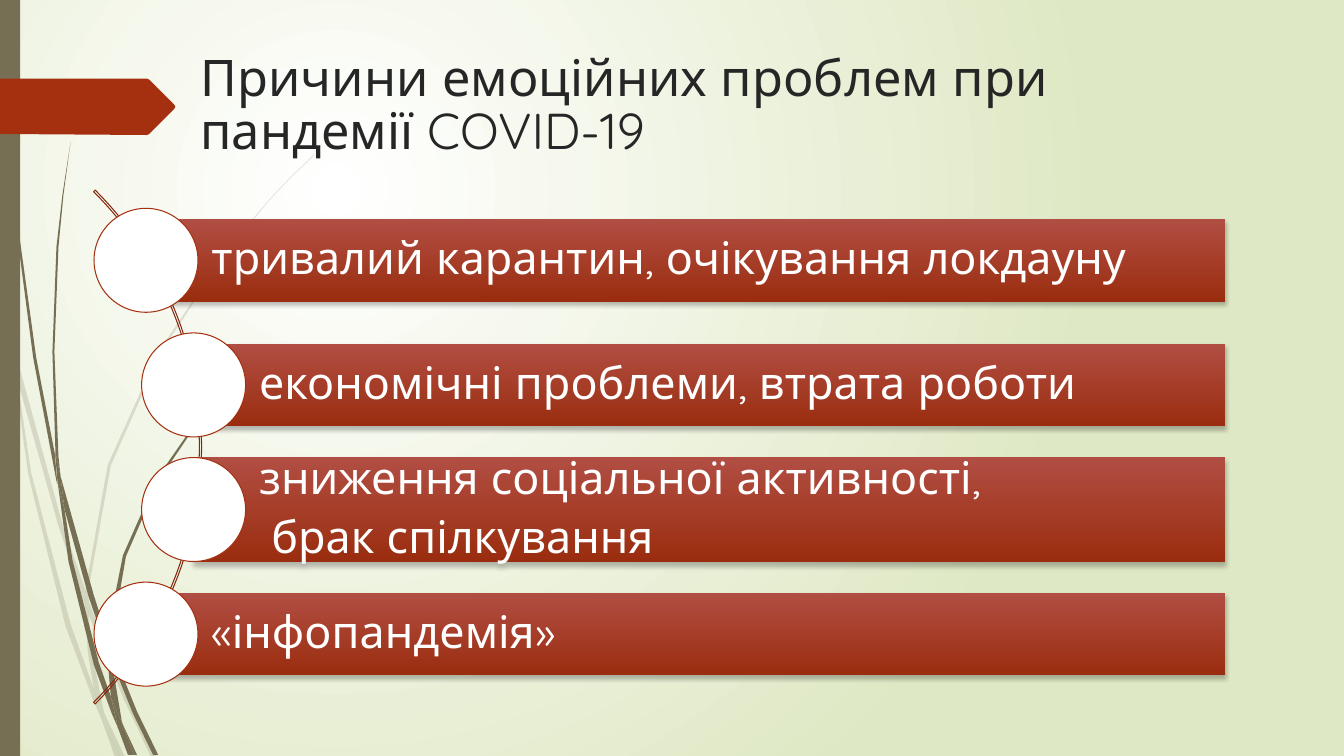
from lxml import etree
from pptx import Presentation
from pptx import util as u
from pptx.dml.color import RGBColor
from pptx.enum import shapes, text
from pptx.oxml.ns import qn

FONT = "Quicksand"
COLORS = {
    "white": "FFFFFF",
    "bg_edge": "DFE8C4",
    "grass": "766F54",
    "accent": "A53010",
    "arc": "84260D",
    "bar_top": "B14E43",
    "bar_bottom": "9A2D0F",
    "title": "262626",
    "shadow": "000000",
}
OUTLINE_UNIT = u.Cm(0.0254)

PALE_GRASS = [
    [(11, 350), (9, 322), (0, 282), (0, 299), (10, 344)],
    [(58, 522), (84, 599), (85, 586), (62, 520), (14, 345), (17, 376)],
    [(92, 607), (88, 596), (88, 610), (123, 694), (150, 751), (155, 751), (127, 692)],
    [(119, 751), (124, 751), (105, 711)],
    [(93, 683), (70, 619), (31, 469), (17, 376), (11, 350), (28, 470), (65, 621),
     (92, 693), (101, 714), (99, 707)],
    [(84, 599), (87, 646), (93, 683), (96, 692), (105, 711), (103, 706), (91, 646),
     (88, 610), (88, 608)],
    [(88, 584), (110, 462), (160, 349), (229, 245), (268, 198), (290, 175), (312, 154),
     (312, 153), (289, 175), (268, 197), (228, 244), (158, 348), (107, 461), (85, 584),
     (85, 586), (88, 596)],
    [(101, 714), (114, 751), (119, 751)],
    [(88, 608), (88, 610), (88, 596), (85, 586), (84, 599)],
    [(96, 692), (93, 683), (99, 707), (101, 714), (119, 751), (105, 711)],
]
DARK_GRASS = [
    [(7, 110), (17, 233), (33, 355), (56, 477), (57, 481), (55, 457), (55, 453),
     (36, 355), (19, 232), (8, 109), (5, 48), (4, 0), (3, 0), (4, 48)],
    [(88, 592), (106, 645), (106, 633), (106, 631), (93, 590), (60, 472), (64, 505)],
    [(113, 649), (110, 641), (111, 656), (132, 708), (152, 749), (157, 749), (136, 706)],
    [(110, 691), (98, 657), (72, 556), (64, 505), (57, 477), (68, 557), (93, 659),
     (111, 708), (117, 722), (116, 717)],
    [(60, 472), (58, 453), (54, 349), (58, 245), (63, 193), (70, 141), (62, 193),
     (56, 245), (52, 349), (55, 449)],
    [(133, 749), (136, 749), (122, 719)],
    [(57, 477), (64, 505), (60, 472), (55, 449), (55, 453)],
    [(111, 633), (125, 552), (158, 476), (205, 406), (231, 374), (245, 359), (261, 344),
     (260, 344), (245, 358), (231, 373), (204, 405), (156, 474), (122, 551), (106, 631),
     (110, 641)],
    [(117, 722), (127, 749), (131, 749)],
    [(106, 645), (110, 691), (116, 706), (122, 719), (121, 716), (111, 656), (109, 651)],
    [(106, 645), (109, 651), (111, 656), (110, 641), (106, 631), (106, 633)],
    [(116, 706), (110, 691), (116, 717), (117, 722), (130, 749), (133, 749), (122, 719)],
]
MARKER_ARROW = [(173, 108), (148, 133), (146, 134), (0, 133), (0, 78), (146, 78),
                (148, 79), (173, 104), (174, 106)]

CAUSES = [
    (3.68, 2.08, ["тривалий карантин, очікування локдауну"]),
    (4.88, 2.08, ["економічні проблеми, втрата роботи"]),
    (4.88, 2.67, ["зниження соціальної активності,", " брак спілкування"]),
    (3.68, 2.08, ["«інфопандемія»"]),
]
FIRST_CENTER, ROW_PITCH = 6.56, 3.14
BAR_RIGHT, CIRCLE_SIZE = 30.88, 2.62


def rgb(name):
    return RGBColor.from_string(COLORS[name])


def sub(parent, tag, **attrs):
    return etree.SubElement(parent, qn(tag), attrs)


def paint(sp, fill=None, line=None):
    sp.shadow.inherit = False
    if fill:
        sp.fill.solid()
        sp.fill.fore_color.rgb = rgb(fill)
    else:
        sp.fill.background()
    if line:
        sp.line.color.rgb = rgb(line)
        sp.line.width = u.Pt(0.75)
    else:
        sp.line.fill.background()


def set_gradient(fill, start, end):
    fill.gradient()
    for stop, color in zip(fill.gradient_stops, (start, end)):
        stop.color.rgb = rgb(color)


def set_background(s):
    set_gradient(s.background.fill, "white", "bg_edge")
    grad = s.element.find(".//" + qn("a:gradFill"))
    grad.remove(grad.find(qn("a:lin")))
    circle = sub(grad, "a:path", path="circle")
    sub(circle, "a:fillToRect", l="50000", t="50000", r="100000", b="100000")


def add_outline(target, points, fill, alpha=None):
    builder = target.build_freeform(*points[0], scale=OUTLINE_UNIT)
    builder.add_line_segments(points[1:], close=True)
    sp = builder.convert_to_shape()
    paint(sp, fill)
    if alpha:
        color = sp.element.spPr.find(qn("a:solidFill"))[0]
        sub(color, "a:alpha", val=str(alpha * 1000))


def add_grass(s, blades, alpha=None):
    group = s.shapes.add_group_shape()
    for points in blades:
        add_outline(group.shapes, points, "grass", alpha)


def add_preset(s, kind, left, top, width, height, fill=None, line=None):
    sp = s.shapes.add_shape(kind, u.Cm(left), u.Cm(top), u.Cm(width), u.Cm(height))
    paint(sp, fill, line)
    return sp


def add_run(p, words, size, color):
    r = p.add_run()
    r.text = words
    r.font.size = u.Pt(size)
    r.font.name = FONT
    r.font.color.rgb = rgb(color)


def add_title(s, words):
    sp = s.shapes.title
    sp.left, sp.top, sp.width, sp.height = (u.Cm(v) for v in (4.8, 0.91, 27.18, 3.56))
    tf = sp.text_frame
    tf.word_wrap = True
    tf.auto_size = text.MSO_AUTO_SIZE.NONE
    tf.vertical_anchor = text.MSO_ANCHOR.MIDDLE
    p = tf.paragraphs[0]
    p.alignment = text.PP_ALIGN.LEFT
    p.line_spacing = 0.88
    add_run(p, words, 36, "title")


def add_bar_shadow(sp):
    effects = sp.element.spPr.find(qn("a:effectLst"))
    shadow = sub(effects, "a:outerShdw", blurRad="38100", dist="25400",
                 dir="5400000", rotWithShape="0")
    color = sub(shadow, "a:srgbClr", val=COLORS["shadow"])
    sub(color, "a:alpha", val="25000")


def add_cause(s, left, center, height, lines):
    sp = add_preset(s, shapes.MSO_SHAPE.RECTANGLE, left, center - height / 2,
                    BAR_RIGHT - left, height)
    set_gradient(sp.fill, "bar_top", "bar_bottom")
    sp.fill.gradient_angle = 270
    add_bar_shadow(sp)
    tf = sp.text_frame
    tf.word_wrap = True
    tf.vertical_anchor = text.MSO_ANCHOR.MIDDLE
    tf.margin_left = u.Cm(1.65)
    tf.margin_right = tf.margin_top = tf.margin_bottom = u.Cm(0.23)
    for i, words in enumerate(lines):
        p = tf.add_paragraph() if i else tf.paragraphs[0]
        p.alignment = text.PP_ALIGN.LEFT
        p.line_spacing = 0.9
        p.space_after = u.Pt(8)
        add_run(p, words, 32, "white")
    add_preset(s, shapes.MSO_SHAPE.OVAL, left - CIRCLE_SIZE / 2, center - CIRCLE_SIZE / 2,
               CIRCLE_SIZE, CIRCLE_SIZE, "white", "accent")


def main():
    prs = Presentation()
    prs.slide_width, prs.slide_height = u.Cm(33.87), u.Cm(19.05)
    s = prs.slides.add_slide(prs.slide_layouts[5])
    set_background(s)
    add_grass(s, PALE_GRASS, alpha=20)
    add_grass(s, DARK_GRASS)
    add_preset(s, shapes.MSO_SHAPE.RECTANGLE, 0, 0, 0.51, 19.05, "grass")
    add_outline(s.shapes, MARKER_ARROW, "accent")
    add_title(s, "Причини емоційних проблем при пандемії COVID-19")
    arc = add_preset(s, shapes.MSO_SHAPE.BLOCK_ARC, -13.23, 2.11, 18.31, 18.31, line="arc")
    for i, value in enumerate((189, 27, 0.003)):
        arc.adjustments[i] = value
    for i, (left, height, lines) in enumerate(CAUSES):
        add_cause(s, left, FIRST_CENTER + i * ROW_PITCH, height, lines)
    prs.save("out.pptx")


if __name__ == "__main__":
    main()
